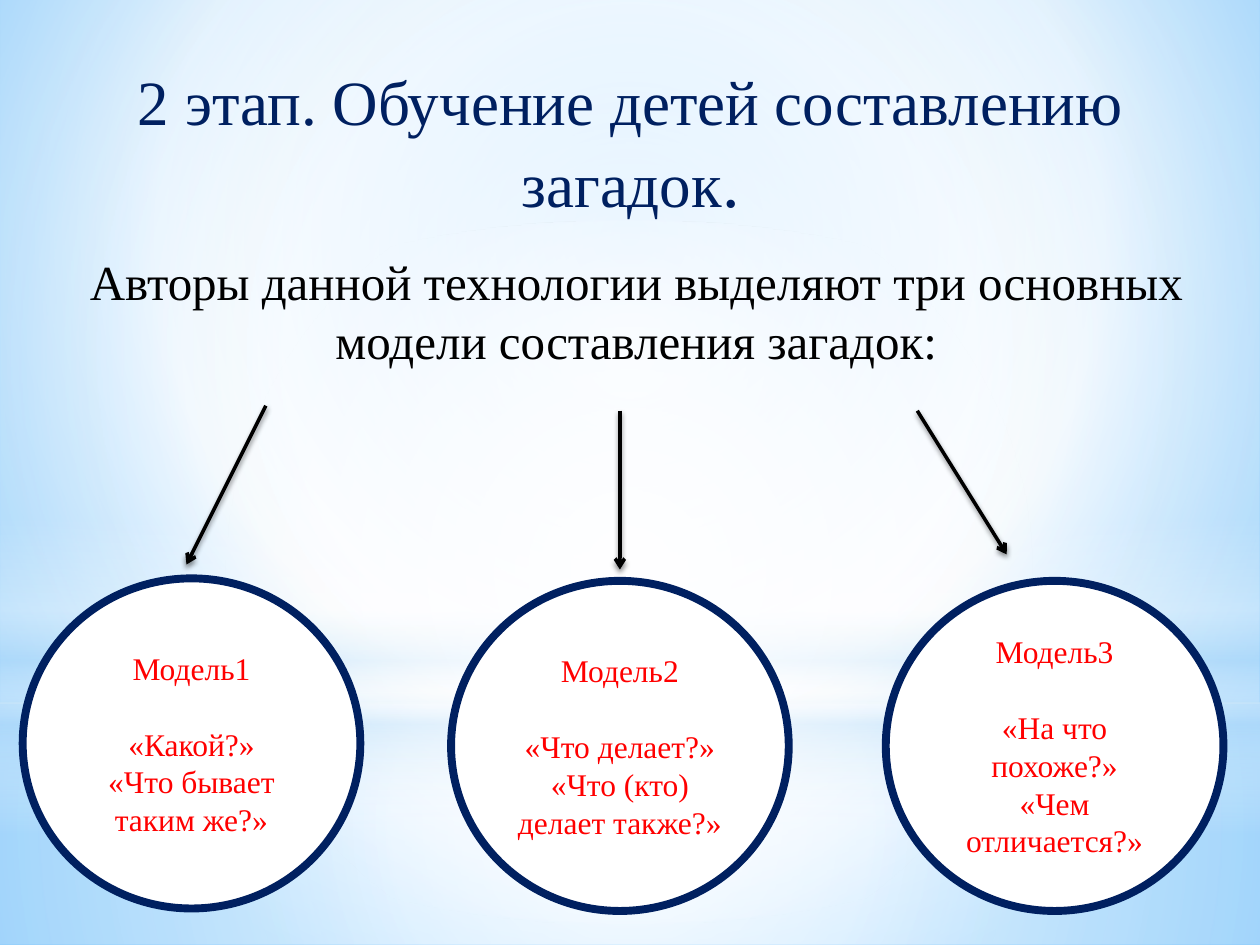
from lxml.etree import SubElement
from pptx import Presentation
from pptx.dml.color import RGBColor
from pptx.enum.shapes import MSO_CONNECTOR, MSO_SHAPE
from pptx.enum.text import MSO_ANCHOR, MSO_AUTO_SIZE, PP_ALIGN
from pptx.oxml import parse_xml
from pptx.oxml.ns import nsdecls, qn
from pptx.util import Inches, Pt

NAVY = RGBColor(0x00, 0x20, 0x60)
RED = RGBColor(0xFF, 0x00, 0x00)
BLACK = RGBColor(0x00, 0x00, 0x00)
WHITE = RGBColor(0xFF, 0xFF, 0xFF)
SKY = RGBColor(0xB4, 0xDC, 0xFA)
PALE_BLUE = RGBColor(0x9E, 0xD5, 0xFF)
EDGE_BLUE = RGBColor(0x5B, 0xB9, 0xFF)
FONT = "Times New Roman"

CENTRE = '<a:path path="circle"><a:fillToRect l="50000" t="50000" r="50000" b="50000"/></a:path>'
UPPER = '<a:path path="circle"><a:fillToRect l="20000" t="10000" r="20000" b="60000"/></a:path>'
DOWN = '<a:lin ang="5400000" scaled="0"/>'


def paint_gradient(fill, element, stops, direction):
    """Fill with (position, colour, opacity) stops, all in percent."""
    fill.solid()
    fill.fore_color.rgb = WHITE
    stop_list = "".join(
        f'<a:gs pos="{position * 1000}"><a:srgbClr val="{colour}">'
        f'<a:alpha val="{opacity * 1000}"/></a:srgbClr></a:gs>'
        for position, colour, opacity in stops)
    gradient = parse_xml(f'<a:gradFill {nsdecls("a")} rotWithShape="1">'
                         f'<a:gsLst>{stop_list}</a:gsLst>{direction}</a:gradFill>')
    solid = element.xpath(".//a:solidFill")[0]
    solid.getparent().replace(solid, gradient)


def format_paragraph(paragraph, size, colour, spacing):
    paragraph.alignment = PP_ALIGN.CENTER
    paragraph.line_spacing = Pt(spacing)
    paragraph.space_before = Pt(0)
    paragraph.font.name = FONT
    paragraph.font.size = Pt(size)
    paragraph.font.color.rgb = colour


presentation = Presentation()
presentation.slide_width = Inches(10)
presentation.slide_height = Inches(7.5)
slide = presentation.slides.add_slide(presentation.slide_layouts[5])

# Background and its layers of light
paint_gradient(slide.background.fill, slide.element,
               [(0, PALE_BLUE, 100), (60, WHITE, 100), (100, EDGE_BLUE, 100)], UPPER)
layers = [
    (MSO_SHAPE.RECTANGLE, 5.58, 1.92, CENTRE,
     [(0, WHITE, 91), (37, WHITE, 76), (100, SKY, 79)]),
    (MSO_SHAPE.RECTANGLE, 0, 5.58, CENTRE,
     [(0, WHITE, 89), (48, WHITE, 62), (100, SKY, 79)]),
    (MSO_SHAPE.RECTANGLE, 4.12, 2.5, DOWN,
     [(0, WHITE, 0), (29, WHITE, 30), (45, SKY, 40), (55, WHITE, 26),
      (65, SKY, 60), (100, WHITE, 0)]),
    (MSO_SHAPE.OVAL, 1.75, 5.58, CENTRE, [(0, WHITE, 100), (56, WHITE, 0)]),
]
for kind, top, height, direction, stops in layers:
    layer = slide.shapes.add_shape(kind, 0, Inches(top), presentation.slide_width, Inches(height))
    layer.shadow.inherit = False
    layer.line.fill.background()
    paint_gradient(layer.fill, layer.element, stops, direction)

# Title, brought in front of the layers
title = slide.shapes.title
title.element.getparent().append(title.element)
title.left, title.top, title.width, title.height = map(Inches, (0.28, 0.44, 9.45, 1.42))
title.text_frame.auto_size = MSO_AUTO_SIZE.NONE
title.text_frame.vertical_anchor = MSO_ANCHOR.TOP
title.text_frame.margin_top = 0
heading = title.text_frame.paragraphs[0]
format_paragraph(heading, 36, NAVY, 47.4)
heading.add_run().text = "2 этап. Обучение детей составлению загадок"
full_stop = heading.add_run()
full_stop.text = "."
full_stop.font.size = Pt(40)

# Introduction
introduction = slide.shapes.add_textbox(*map(Inches, (0.2, 1.94, 9.7, 5.28)))
introduction.text_frame.word_wrap = True
introduction.text_frame.text = "Авторы данной технологии выделяют три основных модели составления загадок:"
format_paragraph(introduction.text_frame.paragraphs[0], 28, BLACK, 34)

# Arrows to the models
arrows = [(2.11, 3.22, 1.48, 4.48), (4.92, 3.26, 4.92, 4.52), (7.28, 3.26, 7.99, 4.4)]
for ends in arrows:
    arrow = slide.shapes.add_connector(MSO_CONNECTOR.STRAIGHT, *map(Inches, ends))
    arrow.line.color.rgb = BLACK
    arrow.line.width = Pt(2)
    SubElement(arrow.line._get_or_add_ln(), qn("a:tailEnd"), type="arrow")
    arrow.element.spPr.append(parse_xml(
        f'<a:effectLst {nsdecls("a")}><a:outerShdw blurRad="{Pt(3.1)}" dist="{Pt(1.8)}" '
        f'dir="5400000" rotWithShape="0"><a:srgbClr val="{BLACK}"><a:alpha val="45000"/>'
        '</a:srgbClr></a:outerShdw></a:effectLst>'))

# Model circles
models = [
    (0.18, 4.59, ["Модель1", "«Какой?»", "«Что бывает таким же?»"]),
    (3.58, 4.61, ["Модель2", "«Что делает?»", "«Что (кто) делает также?»"]),
    (7.03, 4.61, ["Модель3", "«На что похоже?»", "«Чем отличается?»"]),
]
for left, top, lines in models:
    circle = slide.shapes.add_shape(MSO_SHAPE.OVAL, *map(Inches, (left, top, 2.68, 2.62)))
    circle.shadow.inherit = False
    circle.fill.solid()
    circle.fill.fore_color.rgb = WHITE
    circle.line.color.rgb = NAVY
    circle.line.width = Pt(4.5)
    frame = circle.text_frame
    frame.word_wrap = True
    frame.vertical_anchor = MSO_ANCHOR.MIDDLE
    frame.text = "\n".join(lines)
    for paragraph in frame.paragraphs:
        format_paragraph(paragraph, 18, RED, 21.6)
    frame.paragraphs[1].space_before = Pt(21.6)

presentation.save("out.pptx")
